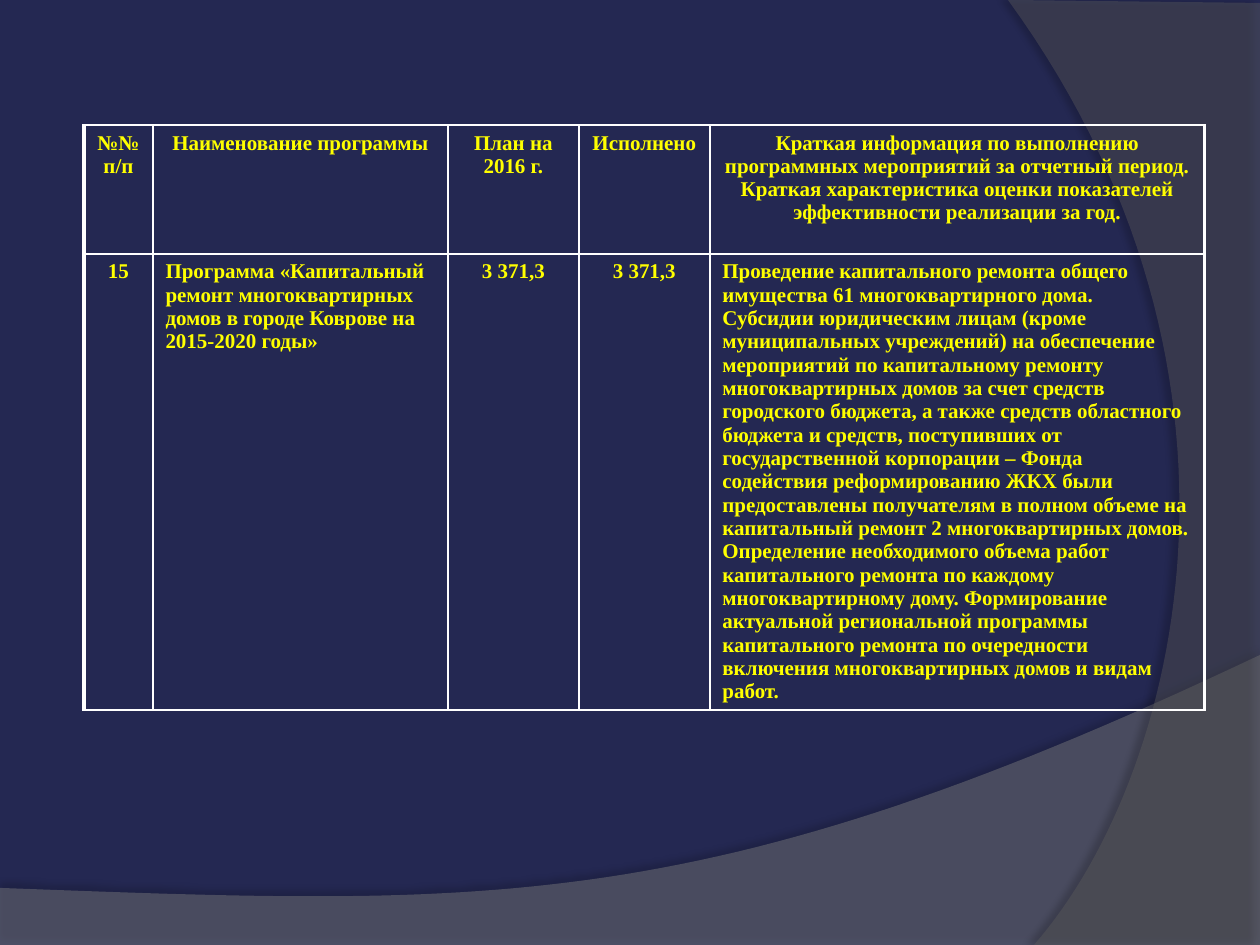
import pptx
import pptx.util
import pptx.dml.color
import pptx.enum.text
import pptx.oxml
import pptx.oxml.ns
from lxml import etree

PX = 914400 // 126  # EMU in one px
NAVY = pptx.dml.color.RGBColor(0x24, 0x28, 0x52)
GRAY = pptx.dml.color.RGBColor(0x7F, 0x7F, 0x7F)
DARK_GRAY = pptx.dml.color.RGBColor(0x5E, 0x5E, 0x5E)
YELLOW = pptx.dml.color.RGBColor(0xFF, 0xFF, 0x00)
WHITE = pptx.dml.color.RGBColor(0xFF, 0xFF, 0xFF)
BLACK = pptx.dml.color.RGBColor(0x00, 0x00, 0x00)

CENTER = pptx.enum.text.PP_ALIGN.CENTER
LEFT = pptx.enum.text.PP_ALIGN.LEFT
CELL_FONT = {"name": "Times New Roman", "size": pptx.util.Pt(12), "bold": True}

COLUMNS = [69, 295, 131, 131, 495]
ROWS = [129, 456]
HEADER = [
    "№№ п/п",
    "Наименование программы",
    "План на 2016 г.",
    "Исполнено",
    "Краткая информация по выполнению программных мероприятий за отчетный "
    "период. Краткая характеристика оценки показателей эффективности "
    "реализации за год.",
]
PROGRAM = [
    "15",
    "Программа «Капитальный ремонт многоквартирных домов в городе Коврове "
    "на 2015-2020 годы»",
    "3 371,3",
    "3 371,3",
    "Проведение капитального ремонта общего имущества 61 многоквартирного "
    "дома.  Субсидии юридическим лицам (кроме муниципальных учреждений) на "
    "обеспечение мероприятий по капитальному ремонту многоквартирных домов "
    "за счет средств городского бюджета, а также средств областного бюджета "
    "и средств, поступивших от государственной корпорации – Фонда содействия "
    "реформированию ЖКХ были предоставлены получателям в полном объеме на "
    "капитальный ремонт 2 многоквартирных домов. Определение необходимого "
    "объема работ капитального ремонта по каждому многоквартирному дому. "
    "Формирование актуальной региональной программы капитального ремонта по "
    "очередности включения многоквартирных домов и видам работ.",
]


def add_element(parent, tag, **attributes):
    values = {key: str(value) for key, value in attributes.items()}
    return etree.SubElement(parent, pptx.oxml.ns.qn(tag), values)


def curve_points(start, control_1, control_2, end, steps=60):
    """Points along a cubic curve, without its start."""
    points = []
    for step in range(1, steps + 1):
        t = step / steps
        weights = ((1 - t) ** 3, 3 * t * (1 - t) ** 2, 3 * t * t * (1 - t), t ** 3)
        corners = (start, control_1, control_2, end)
        points.append(tuple(
            sum(weight * corner[axis] for weight, corner in zip(weights, corners))
            for axis in (0, 1)))
    return points


def add_wave(page, corners, curve, color, opacity, shadow):
    """Translucent area: straight corners, then a curve from the last one."""
    points = corners + curve_points(corners[-1], *curve)
    builder = page.shapes.build_freeform(*(round(v * PX) for v in points[0]), scale=1.0)
    builder.add_line_segments(
        [(round(x * PX), round(y * PX)) for x, y in points[1:]], close=True)
    wave = builder.convert_to_shape()
    wave.fill.solid()
    wave.fill.fore_color.rgb = color
    wave.line.fill.background()
    wave.shadow.inherit = False
    properties = wave._element.spPr
    fill_color = properties.find(".//" + pptx.oxml.ns.qn("a:srgbClr"))
    add_element(fill_color, "a:alpha", val=opacity * 1000)
    effects = properties.find(pptx.oxml.ns.qn("a:effectLst"))
    shadow_opacity, blur, distance, angle = shadow
    outer = add_element(
        effects, "a:outerShdw", blurRad=pptx.util.Pt(blur),
        dist=pptx.util.Pt(distance), dir=angle * 60000, algn="ctr", rotWithShape=0)
    shadow_color = add_element(outer, "a:srgbClr", val=BLACK)
    add_element(shadow_color, "a:alpha", val=shadow_opacity * 1000)


def set_borders(cell, widths):
    """Borders in the order left, right, top, bottom, ahead of the fill."""
    properties = cell._tc.get_or_add_tcPr()
    for index, (side, width) in enumerate(zip("LRTB", widths)):
        line = add_element(properties, "a:ln" + side, w=pptx.util.Pt(width))
        add_element(add_element(line, "a:solidFill"), "a:srgbClr", val=WHITE)
        properties.insert(index, line)


def fill_cell(cell, text, alignment):
    cell.fill.background()
    para = cell.text_frame.paragraphs[0]
    para.alignment = alignment
    span = para.add_run()
    span.text = text
    for name, value in CELL_FONT.items():
        setattr(span.font, name, value)
    span.font.color.rgb = YELLOW


def add_program_table(page, left, top):
    table = page.shapes.add_table(
        len(ROWS), len(COLUMNS), left * PX, top * PX,
        sum(COLUMNS) * PX, sum(ROWS) * PX).table
    table.first_row = table.horz_banding = False
    for column, width in zip(table.columns, COLUMNS):
        column.width = width * PX
    for row, height in zip(table.rows, ROWS):
        row.height = height * PX
    last = len(COLUMNS) - 1
    for row_index, texts in enumerate((HEADER, PROGRAM)):
        for index, text in enumerate(texts):
            cell = table.cell(row_index, index)
            is_prose = row_index > 0 and index in (1, last)
            fill_cell(cell, text, LEFT if is_prose else CENTER)
            set_borders(cell, (2.25 if index == 0 else 1,
                               2.25 if index == last else 1, 1, 1))


def main():
    deck = pptx.Presentation()
    deck.slide_width, deck.slide_height = 1260 * PX, 945 * PX
    page = deck.slides.add_slide(deck.slide_layouts[6])
    page.background.fill.solid()
    page.background.fill.fore_color.rgb = NAVY

    # Background waves: bottom, then right
    add_wave(page, [(0, 888), (0, 946), (1260, 946), (1260, 655)],
             [(704, 919), (493, 906), (0, 888)], GRAY, 45, (35, 4, 3.5, 270))
    add_wave(page, [(1260, 3), (1260, 945), (1034, 945)],
             [(1178, 780), (1283, 378), (1008, 0)], DARK_GRAY, 40, (45, 4, 4, 180))

    # Programme report
    add_program_table(page, 84, 125)
    deck.save("out.pptx")


if __name__ == "__main__":
    main()
